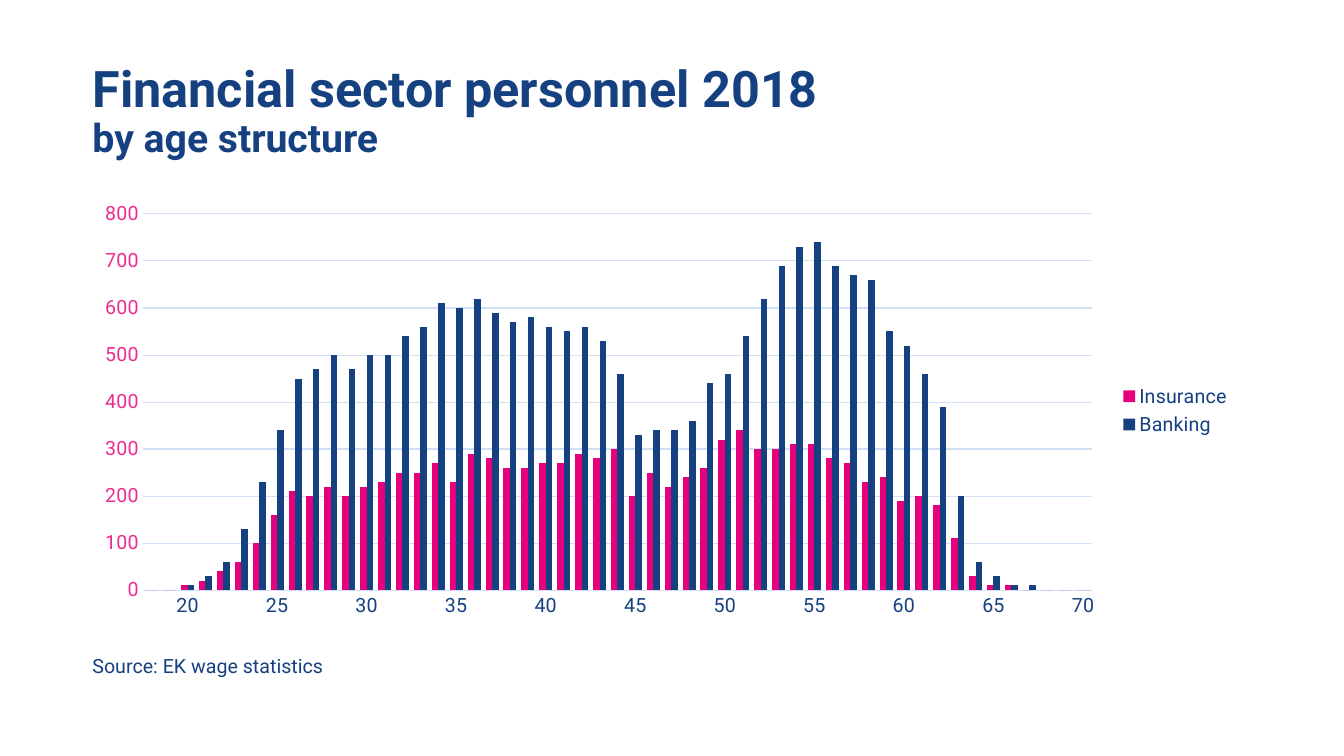
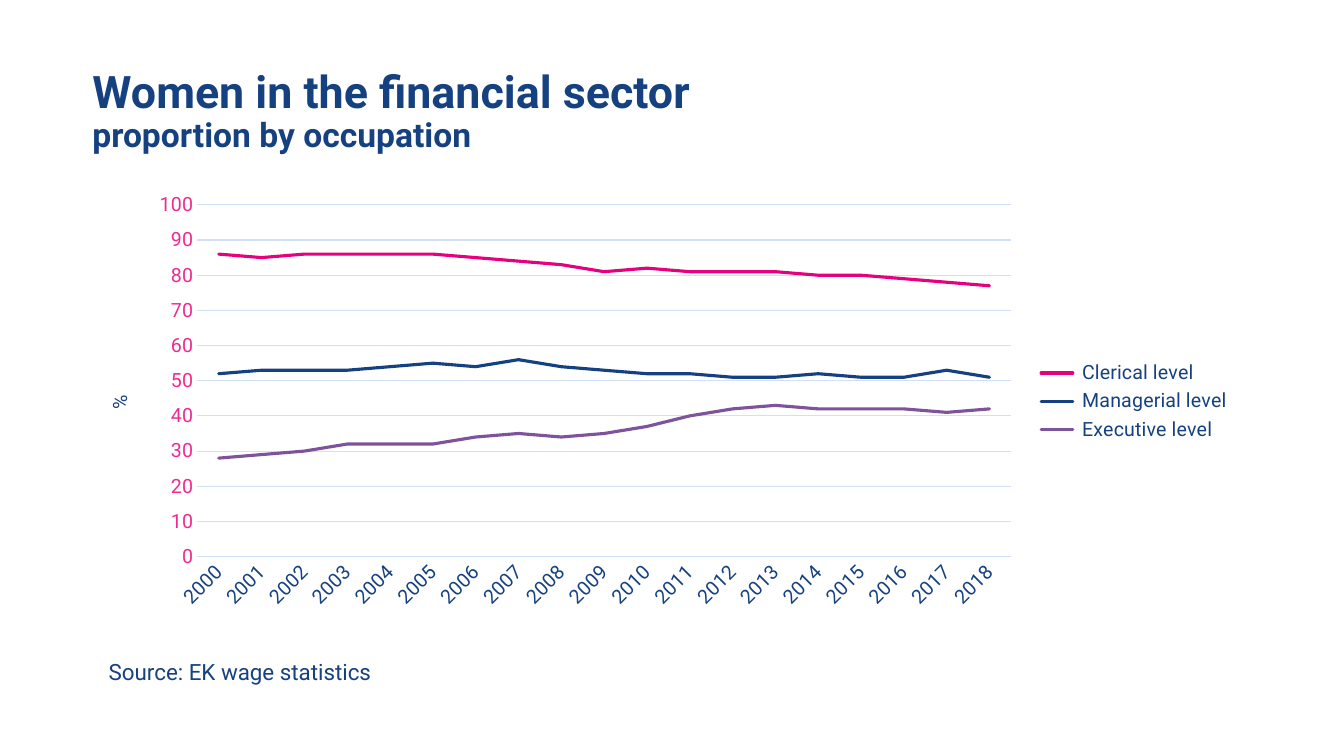
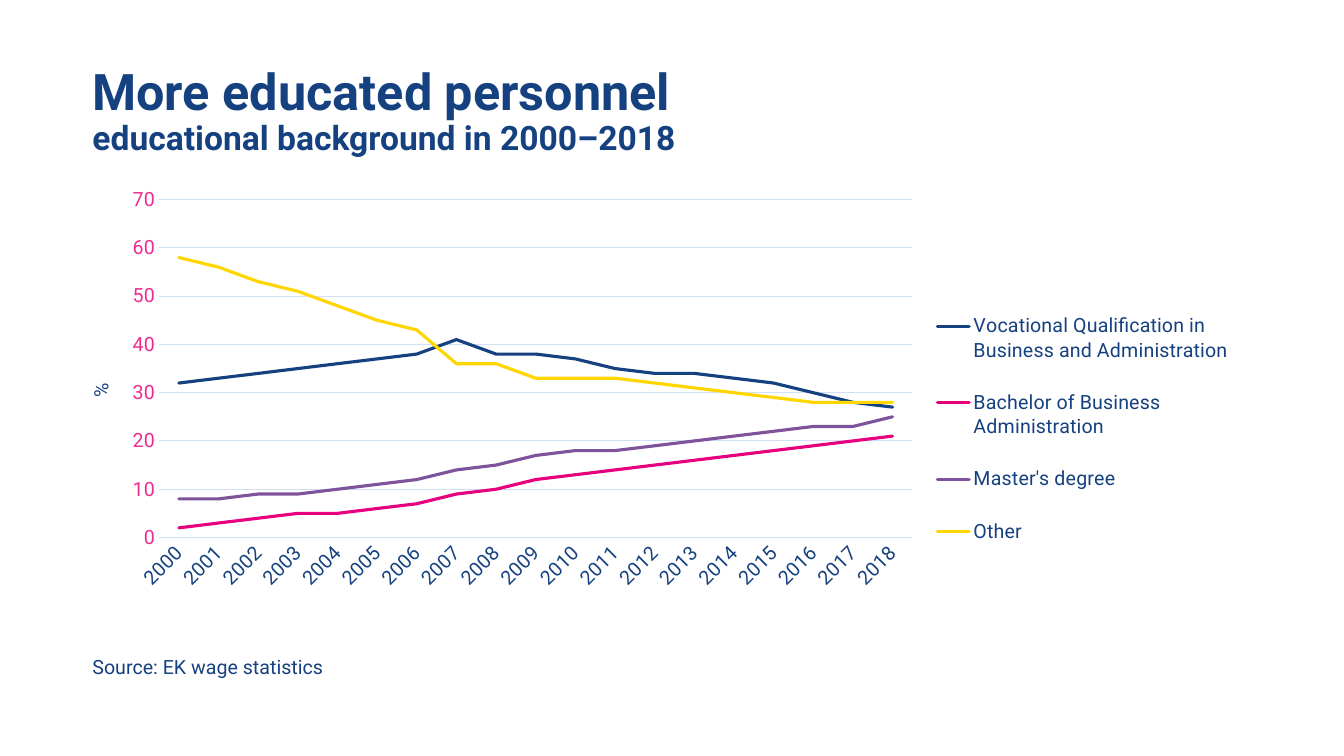
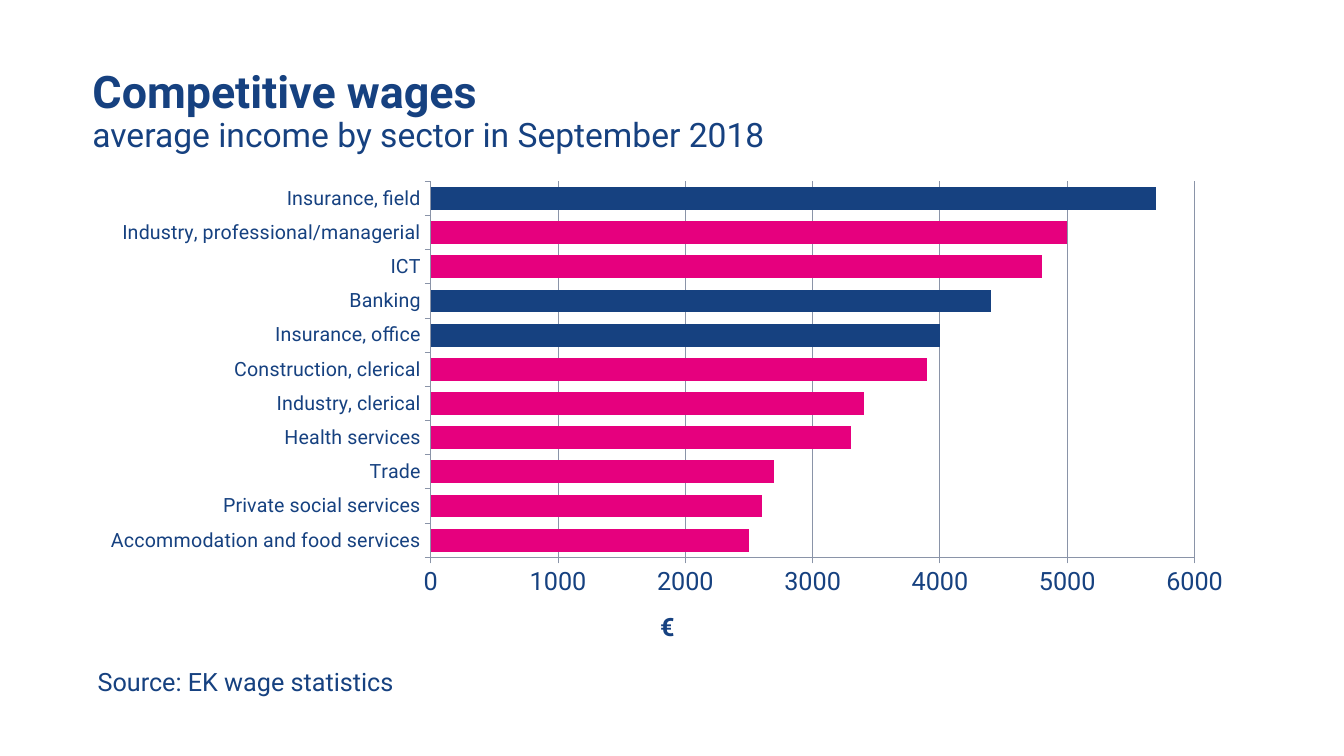
from pptx import Presentation
from pptx.chart.data import CategoryChartData as ChartData
from pptx.dml.color import RGBColor
from pptx.enum.chart import XL_CHART_TYPE as ChartType
from pptx.enum.chart import XL_LEGEND_POSITION as LegendPosition
from pptx.enum.chart import XL_TICK_MARK as TickMark
from pptx.enum.text import MSO_ANCHOR as Anchor
from pptx.oxml import parse_xml
from pptx.oxml.ns import nsdecls, qn
from pptx.util import Cm, Pt

FONT = "Roboto"
COLOURS = {
    "navy": "164180",
    "magenta": "E6007E",
    "pink": "EE2C90",
    "violet": "7F539C",
    "yellow": "FFD600",
    "pale": "D1E0F7",
    "grey": "8A94A8",
}
LEFT, WIDTH = 2.08, 29.21
AUTOMATIC = -1000  # the angle that stands for automatic label rotation
YEARS = [str(year) for year in range(2000, 2019)]


def place(element, index, **percents):
    """Give a chart part a fixed place, in percent of the chart."""
    for old in element.findall(qn("c:layout")):
        element.remove(old)
    target = '<c:layoutTarget val="inner"/>' if index == 0 else ""
    modes = "".join(f'<c:{key}Mode val="edge"/>' for key in "xy")
    values = "".join(f'<c:{key} val="{percent / 100:.4f}"/>'
                     for key, percent in percents.items())
    element.insert(index, parse_xml(
        f'<c:layout {nsdecls("c")}><c:manualLayout>{target}{modes}{values}'
        "</c:manualLayout></c:layout>"))


class Report:
    """The shared style and the current slide."""

    def __init__(self):
        self.deck = Presentation()
        self.deck.slide_width, self.deck.slide_height = Cm(33.87), Cm(19.05)
        self.page = None

    def add_page(self):
        self.page = self.deck.slides.add_slide(self.deck.slide_layouts[6])

    def style(self, font, size, colour="navy", bold=False):
        font.name, font.size, font.bold = FONT, Pt(size), bold
        font.color.rgb = RGBColor.from_string(COLOURS[colour])

    def stroke(self, line, colour, width=0.75):
        line.color.rgb = RGBColor.from_string(COLOURS[colour])
        line.width = Pt(width)

    def paint(self, item, colour):
        item.format.fill.solid()
        item.format.fill.fore_color.rgb = RGBColor.from_string(COLOURS[colour])

    def text_frame(self, left, top, width, height):
        box = self.page.shapes.add_textbox(Cm(left), Cm(top), Cm(width), Cm(height))
        box.text_frame.word_wrap = True
        return box.text_frame

    def title(self, heading, size, subtitle, subtitle_size, subtitle_bold=True):
        frame = self.text_frame(LEFT, 0.99, WIDTH, 3.68)
        frame.vertical_anchor = Anchor.MIDDLE
        para = frame.paragraphs[0]
        para.line_spacing = 0.9
        span = para.add_run()
        span.text = heading
        self.style(span.font, size, bold=True)
        para.add_line_break()
        span = para.add_run()
        span.text = subtitle
        self.style(span.font, subtitle_size, bold=subtitle_bold)

    def source(self, left, top, size, width=8.36):
        para = self.text_frame(left, top, width, 0.9).paragraphs[0]
        para.text = "Source: EK wage statistics"
        self.style(para.font, size)

    def chart(self, kind, categories, series, area, plot, scale, size=14):
        """Add a chart; scale is the top value and the step of its axis."""
        data = ChartData()
        data.categories = categories
        for name, values, _ in series:
            data.add_series(name, values)
        chart = self.page.shapes.add_chart(kind, *map(Cm, area), data).chart
        chart.has_title = chart.has_legend = False
        self.style(chart.font, size)
        place(chart.plots[0]._element.getparent(), 0, **plot)
        chart.plots[0].vary_by_categories = False
        axis = chart.value_axis
        axis.minimum_scale, (axis.maximum_scale, axis.major_unit) = 0, scale
        for item, (_, _, colour) in zip(chart.plots[0].series, series):
            if kind == ChartType.LINE:
                item.smooth = False
                self.stroke(item.format.line, colour, 2.25)
                item._element.spPr.find(qn("a:ln")).set("cap", "rnd")
            else:
                self.paint(item, colour)
        return chart

    def pale_axes(self, chart, rotation=AUTOMATIC):
        category, value = chart.category_axis, chart.value_axis
        for axis, colour in ((category, "navy"), (value, "pink")):
            axis.major_tick_mark = TickMark.NONE
            self.style(axis.tick_labels.font, 14, colour)
        category._element.txPr.find(qn("a:bodyPr")).set("rot", str(rotation * 60000))
        self.stroke(category.format.line, "pale")
        self.stroke(value.major_gridlines.format.line, "pale")
        value.format.line.fill.background()

    def legend(self, chart, **percents):
        chart.has_legend = True
        legend = chart.legend
        legend.position = LegendPosition.RIGHT
        legend.include_in_layout = False
        self.style(legend.font, 14)
        if percents:
            place(legend._element, 1, **percents)

    def unit(self, chart, text, size, x, y, rotation=0, bold=False):
        title = chart.value_axis.axis_title
        frame = title.text_frame
        frame.text = text
        frame._txBody.find(qn("a:bodyPr")).set("rot", str(rotation * 60000))
        self.style(frame.paragraphs[0].font, size, bold=bold)
        place(title._element, 1, x=x, y=y)


def age_structure(report):
    report.add_page()
    report.title("Financial sector personnel 2018", 36, "by age structure", 28)
    ages = [str(age) if age % 5 == 0 else "" for age in range(18, 71)]
    insurance = [
        0, 0, 10, 20, 40, 60, 100, 160, 210, 200, 220, 200, 220, 230, 250, 250, 270, 230,
        290, 280, 260, 260, 270, 270, 290, 280, 300, 200, 250, 220, 240, 260, 320, 340,
        300, 300, 310, 310, 280, 270, 230, 240, 190, 200, 180, 110, 30, 10, 10, 0, 0, 0, 0]
    banking = [
        0, 0, 10, 30, 60, 130, 230, 340, 450, 470, 500, 470, 500, 500, 540, 560, 610, 600,
        620, 590, 570, 580, 560, 550, 560, 530, 460, 330, 340, 340, 360, 440, 460, 540,
        620, 690, 730, 740, 690, 670, 660, 550, 520, 460, 390, 200, 60, 30, 10, 10, 0, 0, 0]
    chart = report.chart(
        ChartType.COLUMN_CLUSTERED, ages,
        [("Insurance", insurance, "magenta"), ("Banking", banking, "navy")],
        (LEFT, 4.88, WIDTH, 10.92), dict(x=5.2, y=4.7, w=81.9, h=86.8), (800, 100))
    chart.plots[0].gap_width = 75
    report.pale_axes(chart)
    report.legend(chart)
    report.source(LEFT, 16.36, 14)


def women_by_occupation(report):
    report.add_page()
    report.title("Women in the financial sector", 32, "proportion by occupation", 24)
    levels = [
        (" Clerical level", [86, 85, 86, 86, 86, 86, 85, 84, 83, 81, 82, 81, 81, 81, 80,
                             80, 79, 78, 77], "magenta"),
        (" Managerial level", [52, 53, 53, 53, 54, 55, 54, 56, 54, 53, 52, 52, 51, 51, 52,
                               51, 51, 53, 51], "navy"),
        (" Executive level", [28, 29, 30, 32, 32, 32, 34, 35, 34, 35, 37, 40, 42, 43, 42,
                              42, 42, 41, 42], "violet"),
    ]
    chart = report.chart(
        ChartType.LINE, YEARS, levels, (LEFT, 4.65, WIDTH, 10.92),
        dict(x=9.9, y=4.7, w=70.2, h=81.2), (100, 10))
    report.pale_axes(chart, rotation=-45)
    report.legend(chart)
    report.unit(chart, "%", 14, 1.7, 47.8, rotation=-90)
    report.source(2.49, 16.46, 16)


def educational_background(report):
    report.add_page()
    report.title("More educated personnel", 36, "educational background in 2000–2018", 24)
    degrees = [
        ("Vocational Qualification in Business and Administration",
         [32, 33, 34, 35, 36, 37, 38, 41, 38, 38, 37, 35, 34, 34, 33, 32, 30, 28, 27],
         "navy"),
        ("Bachelor of Business Administration",
         [2, 3, 4, 5, 5, 6, 7, 9, 10, 12, 13, 14, 15, 16, 17, 18, 19, 20, 21], "magenta"),
        ("Master's degree",
         [8, 8, 9, 9, 10, 11, 12, 14, 15, 17, 18, 18, 19, 20, 21, 22, 23, 23, 25],
         "violet"),
        ("Other",
         [58, 56, 53, 51, 48, 45, 43, 36, 36, 33, 33, 33, 32, 31, 30, 29, 28, 28, 28],
         "yellow"),
    ]
    chart = report.chart(
        ChartType.LINE, YEARS, degrees, (LEFT, 4.55, WIDTH, 10.92),
        dict(x=6.6, y=4.4, w=65, h=78), (70, 10))
    report.pale_axes(chart, rotation=-45)
    report.legend(chart, x=73.3, y=24.3, w=26, h=66)
    report.unit(chart, "%", 14, 0.1, 45.9, rotation=-90)
    report.source(LEFT, 16.38, 14)


def wages_by_sector(report):
    report.add_page()
    report.title("Competitive wages", 32, "average income by sector in September 2018", 24,
                 subtitle_bold=False)
    wages = {
        "Accommodation and food services": 2500,
        "Private social services": 2600,
        "Trade": 2700,
        "Health services": 3300,
        "Industry, clerical": 3400,
        "Construction, clerical": 3900,
        "Insurance, office": 4000,
        "Banking": 4400,
        "ICT": 4800,
        "Industry, professional/managerial": 5000,
        "Insurance, field": 5700,
    }
    chart = report.chart(
        ChartType.BAR_CLUSTERED, list(wages), [("Series 1", wages.values(), "magenta")],
        (2.21, 4.32, WIDTH, 12.52), dict(x=29.6, y=2, w=65.9, h=75.7), (6000, 1000),
        size=18)
    plot = chart.plots[0]
    plot.gap_width = 50
    # Financial sectors stand out in navy
    for index, sector in enumerate(wages):
        if sector.startswith(("Insurance", "Banking")):
            report.paint(plot.series[0].points[index], "navy")
    for axis, size in ((chart.category_axis, 14), (chart.value_axis, 18)):
        axis.major_tick_mark = TickMark.OUTSIDE
        report.style(axis.tick_labels.font, size)
        report.stroke(axis.format.line, "grey")
    report.stroke(chart.value_axis.major_gridlines.format.line, "grey")
    report.unit(chart, "€", 18, 49, 87.4, bold=True)
    report.source(2.21, 16.66, 18, width=14.76)


def main():
    report = Report()
    age_structure(report)
    women_by_occupation(report)
    educational_background(report)
    wages_by_sector(report)
    report.deck.save("out.pptx")


if __name__ == "__main__":
    main()
